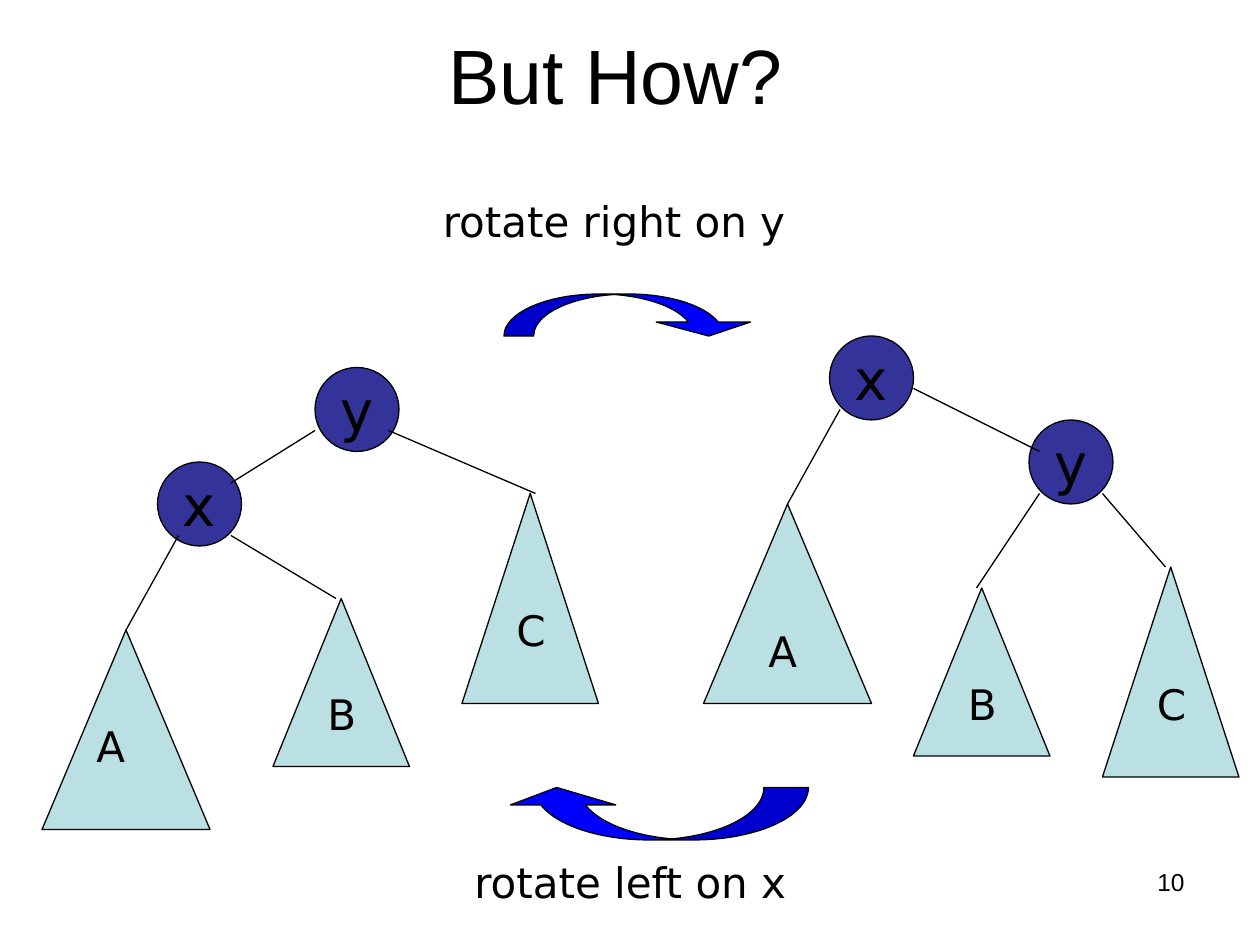
from lxml.etree import SubElement
from pptx import Presentation
from pptx.dml.color import RGBColor
from pptx.enum.shapes import MSO_CONNECTOR, MSO_SHAPE as Preset
from pptx.enum.text import MSO_ANCHOR as Anchor, PP_ALIGN as Align
from pptx.oxml.ns import qn
from pptx.util import Inches, Pt

COLORS = {"ink": "000000", "node": "333399", "subtree": "BBE0E3", "arrow": "0000FF"}

deck = Presentation()
deck.slide_width, deck.slide_height = Inches(10), Inches(7.5)
page = deck.slides.add_slide(deck.slide_layouts[5])
CELL = deck.slide_width / 120  # grid of 120 columns by 90 rows


def draw(shapes, preset, cells, color):
    """Add an outlined shape at (column, row, columns, rows)."""
    shape = shapes.add_shape(preset, *(round(n * CELL) for n in cells))
    shape.shadow.inherit = False
    shape.fill.solid()
    shape.fill.fore_color.rgb = RGBColor.from_string(COLORS[color])
    shape.line.color.rgb = RGBColor.from_string(COLORS["ink"])
    shape.line.width = Pt(0.75)
    return shape


def write(box, text, size, font="DejaVu Sans", align=Align.LEFT, anchor=Anchor.TOP, wrap=True):
    """Fill a box with one formatted paragraph."""
    frame = box.text_frame
    frame.word_wrap, frame.vertical_anchor = wrap, anchor
    para = frame.paragraphs[0]
    para.alignment = align
    span = para.add_run()
    span.text = text
    for name, value in {"name": font, "size": Pt(size), "bold": False}.items():
        setattr(span.font, name, value)
    span.font.color.rgb = RGBColor.from_string(COLORS["ink"])


# Title
title = page.shapes.title
title_place = {"left": 5.25, "top": 3, "width": 108.75, "height": 9}
for side, cells in title_place.items():
    setattr(title, side, round(cells * CELL))
write(title, "But How? ", 44, "Arial", Align.CENTER, Anchor.BOTTOM)

# Trees before and after the rotation: nodes, subtrees with label corners, edges
SUBTREE_SIZES = {"A": (16, 19), "B": (13, 16), "C": (13, 20)}
trees = [
    {
        "nodes": {"x": (15, 44), "y": (30, 35)},
        "subtrees": {"A": (4, 60, 8, 68), "B": (26, 57, 30, 65), "C": (44, 47, 48, 57)},
        "edges": [(17, 51, 12, 60), (22, 51, 32, 57), (30, 41, 22, 46), (37, 41, 51, 47)],
    },
    {
        "nodes": {"x": (79, 32), "y": (98, 40)},
        "subtrees": {"A": (67, 48, 72, 59), "B": (87, 56, 91, 64), "C": (105, 54, 109, 64)},
        "edges": [(80, 39, 75, 48), (87, 37, 99, 43), (99, 47, 93, 56), (105, 47, 111, 54)],
    },
]
for tree in trees:
    shapes = page.shapes.add_group_shape().shapes
    for name, corner in tree["nodes"].items():
        node = draw(shapes, Preset.OVAL, (*corner, 8, 8), "node")
        write(node, name, 32, align=Align.CENTER, anchor=Anchor.MIDDLE, wrap=False)
    for name, (column, row, label_column, label_row) in tree["subtrees"].items():
        draw(shapes, Preset.ISOSCELES_TRIANGLE, (column, row, *SUBTREE_SIZES[name]), "subtree")
        label_cells = (label_column, label_row, 5.1, 6)
        label = shapes.add_textbox(*(round(n * CELL) for n in label_cells))
        write(label, name, 24, wrap=False)
    for ends in tree["edges"]:
        edge = shapes.add_connector(MSO_CONNECTOR.STRAIGHT, *(round(n * CELL) for n in ends))
        edge.line.color.rgb = RGBColor.from_string(COLORS["ink"])
        edge.line.width = Pt(0.75)
        SubElement(edge._element.spPr, qn("a:effectLst"))

# Rotation arrows
right_arrow = draw(page.shapes, Preset.CURVED_DOWN_ARROW, (48, 28, 24, 4), "arrow")
left_arrow = draw(page.shapes, Preset.CURVED_UP_ARROW, (48, 75, 29, 5), "arrow")
left_arrow._element.spPr.xfrm.set("flipH", "1")
for arrow, bends in ((right_arrow, (0.706, 2.245, 0.333)), (left_arrow, (0.848, 2.008, 0.333))):
    for index, bend in enumerate(bends):
        arrow.adjustments[index] = bend

# Captions and page number
for text, cells, style in (
    ("rotate right on y", (41, 18, 40, 6), {"size": 24}),
    ("rotate left on x", (44, 81, 40, 6), {"size": 24}),
    ("10", (86, 82, 28, 6.25), {"size": 14, "font": "Arial", "align": Align.RIGHT}),
):
    box = page.shapes.add_textbox(*(round(n * CELL) for n in cells))
    write(box, text, **style)

deck.save("out.pptx")
